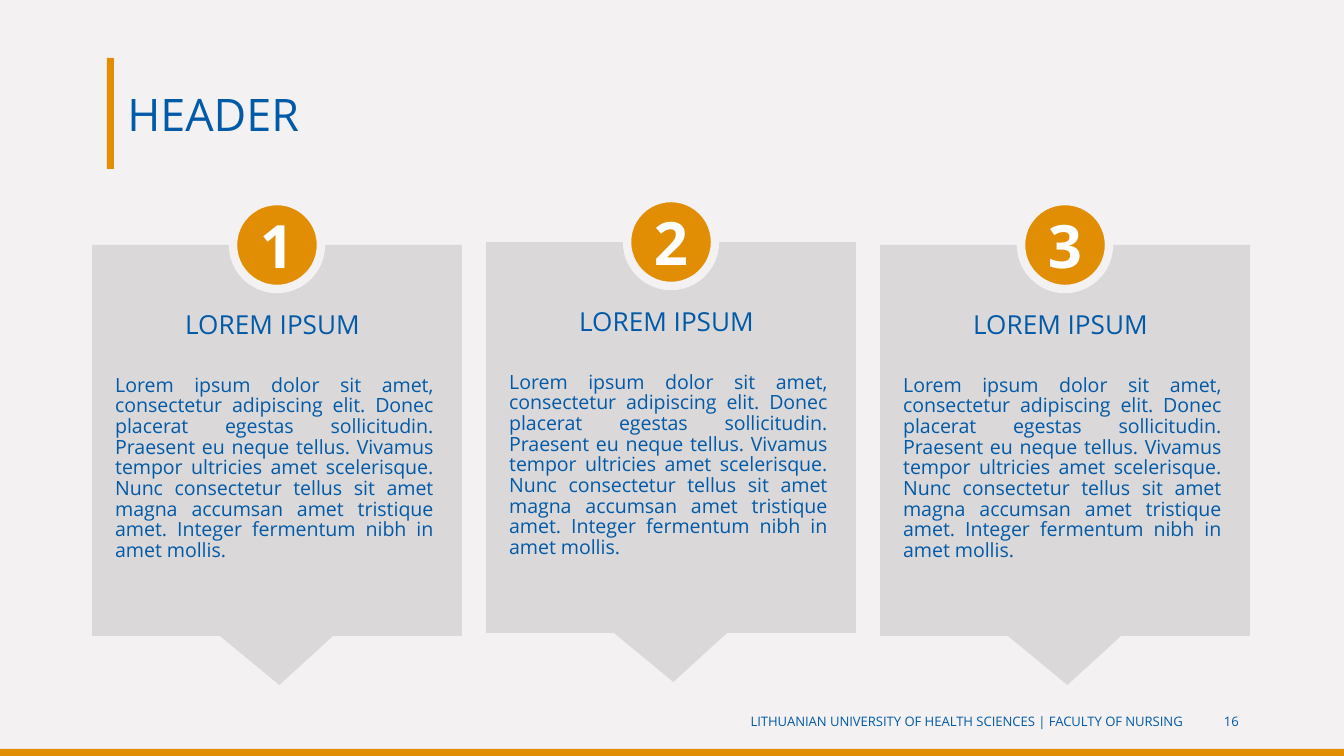
from dataclasses import dataclass

from pptx import Presentation
from pptx.dml.color import RGBColor
from pptx.enum.shapes import MSO_SHAPE as Shape
from pptx.enum.text import MSO_ANCHOR as Anchor, MSO_AUTO_SIZE as AutoSize, PP_ALIGN as Align
from pptx.util import Emu, Pt

HEADER = "HEADER"
FOOTER = "LITHUANIAN UNIVERSITY OF HEALTH SCIENCES | FACULTY OF NURSING"
PAGE = "16"
LOREM = (
    "Lorem ipsum dolor sit amet, consectetur adipiscing elit. Donec placerat "
    "egestas sollicitudin. Praesent eu neque tellus. Vivamus tempor ultricies "
    "amet scelerisque. Nunc consectetur tellus sit amet magna accumsan amet "
    "tristique amet. Integer fermentum nibh in amet mollis."
)
# number, heading, text, top of the card
CARDS = [
    ("1", "LOREM IPSUM ", LOREM, 245),
    ("2", "LOREM IPSUM ", LOREM, 242),
    ("3", "LOREM IPSUM ", LOREM, 245),
]
FIRST_CARD, CARD_STEP = 92, 394
CARD_W, CARD_H = 370, 391
BADGE = 88
LINE_SPACING = 0.88


@dataclass(frozen=True)
class Theme:
    font: str = "Open Sans"
    page: str = "F3F1F2"
    accent: str = "E28E04"
    card: str = "DBD8D9"
    text: str = "015AA7"
    white: str = "FFFFFF"
    header: float = 24
    number: float = 32
    heading: float = 14
    body: float = 10.5
    footer: float = 7


THEME = Theme()


def px(n):
    return Emu(round(n * 914400 / 134.4))


def rgb(value):
    return RGBColor.from_string(value)


def write(shape, text, size, align, color=THEME.text, bold=False, anchor=Anchor.MIDDLE, spacing=None):
    frame = shape.text_frame
    frame.text = text
    frame.word_wrap = True
    frame.auto_size = AutoSize.NONE
    frame.vertical_anchor = anchor
    paragraph = frame.paragraphs[0]
    paragraph.alignment = align
    paragraph.line_spacing = spacing
    font = paragraph.font
    font.name, font.size, font.bold = THEME.font, Pt(size), bold
    font.color.rgb = rgb(color)


def add_solid(shapes, kind, box, fill):
    shape = shapes.add_shape(kind, *map(px, box))
    shape.shadow.inherit = False
    shape.fill.solid()
    shape.fill.fore_color.rgb = rgb(fill)
    shape.line.fill.background()
    return shape


def add_text(shapes, box, *args, **kwargs):
    write(shapes.add_textbox(*map(px, box)), *args, **kwargs)


def add_card(slide, left, top, number, heading, text):
    card = slide.shapes.add_group_shape().shapes
    add_solid(card, Shape.RECTANGLE, (left, top, CARD_W, CARD_H), THEME.card)

    badge_box = (left + (CARD_W - BADGE) / 2, top - BADGE / 2, BADGE, BADGE)
    badge = add_solid(card, Shape.OVAL, badge_box, THEME.accent)
    badge.line.color.rgb = rgb(THEME.page)
    badge.line.width = Pt(4.5)
    write(badge, number, THEME.number, Align.CENTER, THEME.white, bold=True)

    pointer = add_solid(card, Shape.ISOSCELES_TRIANGLE, (left + 128, top + CARD_H, 113, 49), THEME.card)
    pointer.rotation = 180
    pointer.adjustments[0] = 0.475

    add_text(card, (left + 10, top + 124, 345, 227), text, THEME.body, Align.JUSTIFY,
             anchor=Anchor.TOP, spacing=LINE_SPACING)
    add_text(card, (left + 10, top + 61, 348, 46), heading, THEME.heading, Align.CENTER,
             anchor=Anchor.TOP, spacing=LINE_SPACING)


def main():
    deck = Presentation()
    deck.slide_width, deck.slide_height = px(1344), px(756)
    slide = deck.slides.add_slide(deck.slide_layouts.get_by_name("Title Only"))
    slide.background.fill.solid()
    slide.background.fill.fore_color.rgb = rgb(THEME.page)

    title = slide.shapes.title
    title.left, title.top, title.width, title.height = map(px, (114, 58, 1137, 111))
    write(title, HEADER, THEME.header, Align.LEFT)

    for bar in [(0, 749, 1344, 7), (107, 58, 7, 111)]:
        add_solid(slide.shapes, Shape.RECTANGLE, bar, THEME.accent)
    add_text(slide.shapes, (226, 701, 970, 40), FOOTER, THEME.footer, Align.RIGHT)
    add_text(slide.shapes, (1204, 701, 48, 40), PAGE, THEME.footer, Align.RIGHT)

    for i, (number, heading, text, top) in enumerate(CARDS):
        add_card(slide, FIRST_CARD + i * CARD_STEP, top, number, heading, text)

    deck.save("out.pptx")


if __name__ == "__main__":
    main()
